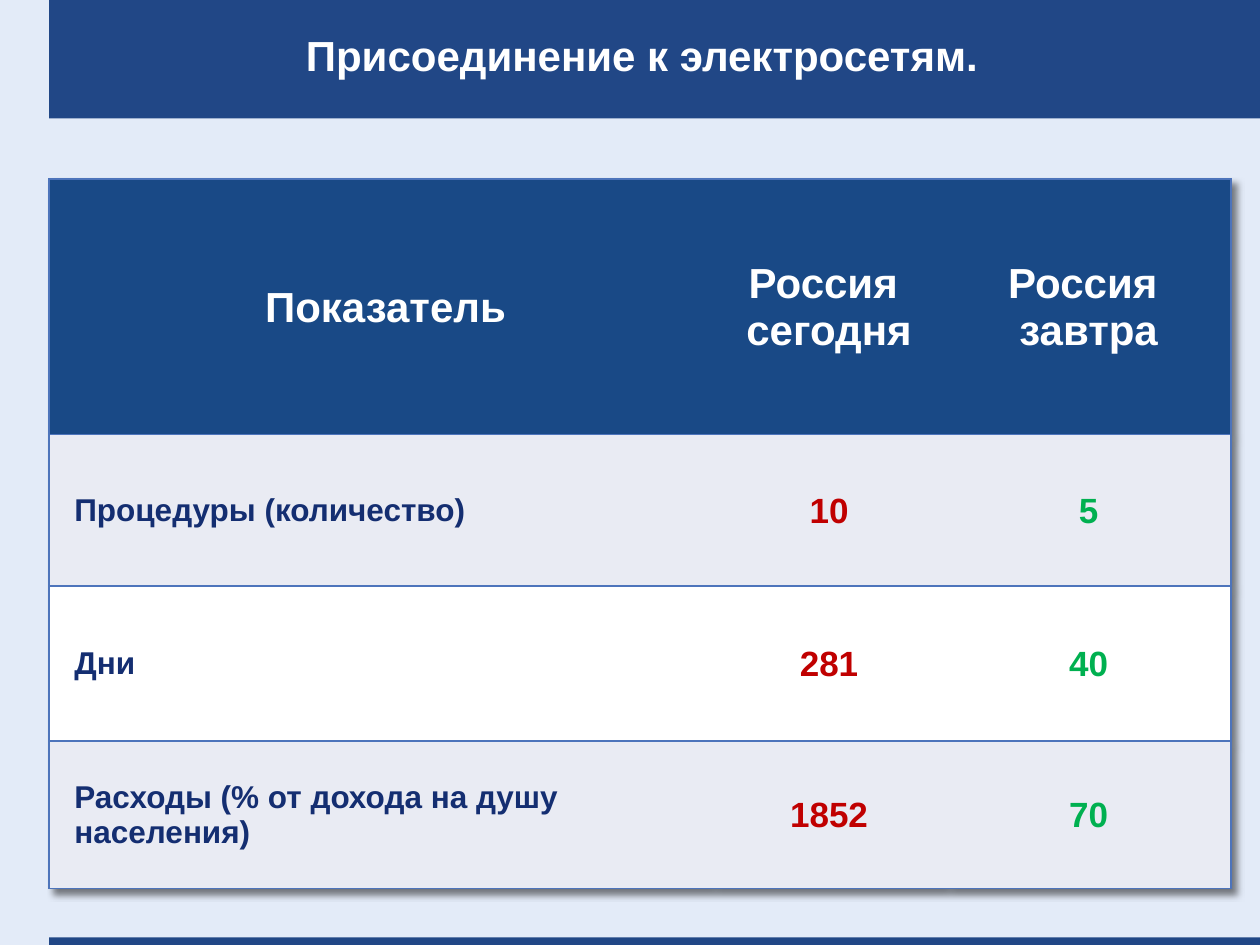
import pptx
import pptx.dml.color
import pptx.enum.shapes
import pptx.enum.text
import pptx.oxml
import pptx.oxml.ns
import pptx.util

IN = pptx.util.Inches
CENTER = pptx.enum.text.PP_ALIGN.CENTER
LEFT = pptx.enum.text.PP_ALIGN.LEFT
MIDDLE = pptx.enum.text.MSO_ANCHOR.MIDDLE
WIDTH, HEIGHT = 10, 7.5
MARGIN, BAND = 0.39, 0.94
COLS = [5.26, 1.86, 2.26]
ROWS = [2.03, 1.2, 1.23, 1.17]
CELLS = [
    ["Показатель", "Россия \nсегодня", "Россия \nзавтра"],
    ["Процедуры (количество)", "10", "5"],
    ["Дни", "281", "40"],
    ["Расходы (% от дохода на душу населения)", "1852", "70"],
]
FILLS = ["194986", "E9EBF3", "FFFFFF", "E9EBF3"]
STYLES = [(18, "142E71", LEFT), (20, "C00000", CENTER), (20, "00B050", CENTER)]
HEADER = (24, "FFFFFF", CENTER)


def rgb(color):
    return pptx.dml.color.RGBColor.from_string(color)


def xml(body):
    tag, rest = body.split(" ", 1)
    return pptx.oxml.parse_xml(f"{tag} {pptx.oxml.ns.nsdecls('a')} {rest}")


def shadow(blur, dist, alpha):
    return xml(
        f'<a:effectLst ><a:outerShdw blurRad="{IN(blur)}" dist="{IN(dist)}" dir="2700000" '
        f'algn="tl" rotWithShape="0"><a:srgbClr val="000000"><a:alpha val="{alpha * 1000}"/>'
        '</a:srgbClr></a:outerShdw></a:effectLst>')


def style_text(tf, size, color, align):
    for p in tf.paragraphs:
        p.alignment = align
        for r in p.runs:
            r.font.name = "Arial"
            r.font.size = pptx.util.Pt(size)
            r.font.bold = True
            r.font.color.rgb = rgb(color)


def add_band(s, top, height):
    sp = s.shapes.add_shape(pptx.enum.shapes.MSO_SHAPE.RECTANGLE,
                            IN(MARGIN), IN(top), IN(WIDTH - MARGIN), IN(height))
    sp.shadow.inherit = False
    sp.fill.solid()
    sp.fill.fore_color.rgb = rgb("214786")
    sp.line.fill.background()
    s.shapes.title.element.addprevious(sp.element)


def set_title(s, text):
    sp = s.shapes.title
    sp.left, sp.top, sp.width, sp.height = IN(MARGIN), IN(0), IN(9.21), IN(BAND)
    tf = sp.text_frame
    tf.text = text
    tf.word_wrap = True
    tf.vertical_anchor = MIDDLE
    tf.margin_left = IN(0.2)
    tf.margin_top = tf.margin_right = tf.margin_bottom = 0
    style_text(tf, 24, "FFFFFF", CENTER)
    p = tf.paragraphs[0]
    p.line_spacing = 0.8
    fill = p.runs[0].font.color
    fill.rgb = rgb("FFFFFF")
    rpr = p.runs[0].font._element if hasattr(p.runs[0].font, "_element") else p._p.r_lst[0].rPr
    rpr.find(pptx.oxml.ns.qn("a:solidFill")).addnext(shadow(0, 0.04, 100))


def set_borders(cell, col):
    tcpr = cell._tc.get_or_add_tcPr()
    visible = {"L": col == 0, "R": col == len(COLS) - 1, "T": True, "B": True}
    for side, shown in visible.items():
        paint = '<a:solidFill><a:srgbClr val="4D74BB"/></a:solidFill>' if shown else "<a:noFill/>"
        tcpr.append(xml(f'<a:ln{side} w="{pptx.util.Pt(1)}">{paint}</a:ln{side}>'))


def set_cell(cell, row, col):
    tf = cell.text_frame
    tf.text = CELLS[row][col]
    cell.vertical_anchor = MIDDLE
    cell.margin_left = cell.margin_right = cell.margin_top = IN(0.01)
    cell.margin_bottom = 0
    set_borders(cell, col)
    cell.fill.solid()
    cell.fill.fore_color.rgb = rgb(FILLS[row])
    if col == 0:
        ppr = tf.paragraphs[0]._p.get_or_add_pPr()
        ppr.set("marL", str(IN(0.08 if row == 0 else 0.19)))
        ppr.set("indent", "0")
    style_text(tf, *(HEADER if row == 0 else STYLES[col]))


def add_grid(s):
    table = s.shapes.add_table(len(ROWS), len(COLS), IN(MARGIN), IN(1.42),
                               IN(sum(COLS)), IN(sum(ROWS))).table
    for col, width in enumerate(COLS):
        table.columns[col].width = IN(width)
    for row, height in enumerate(ROWS):
        table.rows[row].height = IN(height)
        for col in range(len(COLS)):
            set_cell(table.cell(row, col), row, col)
    table._tbl.tblPr.insert(0, shadow(0.05, 0.06, 50))


def main():
    prs = pptx.Presentation()
    prs.slide_width, prs.slide_height = IN(WIDTH), IN(HEIGHT)
    s = prs.slides.add_slide(prs.slide_layouts[5])
    s.background.fill.solid()
    s.background.fill.fore_color.rgb = rgb("E3EBF8")
    add_band(s, 0, BAND)
    add_band(s, 7.44, 0.06)
    set_title(s, "Присоединение к электросетям.")
    add_grid(s)
    prs.save("out.pptx")


if __name__ == "__main__":
    main()
